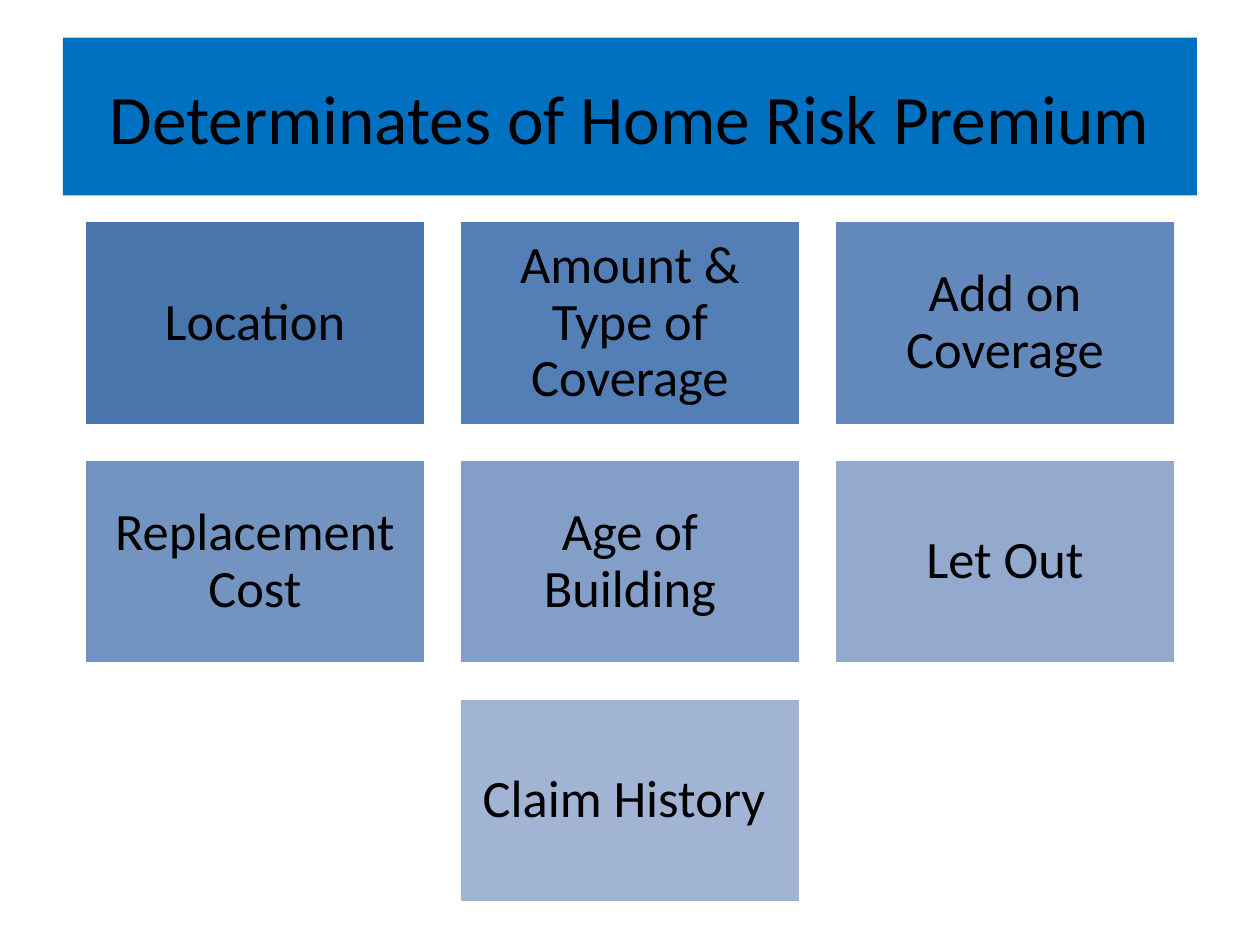
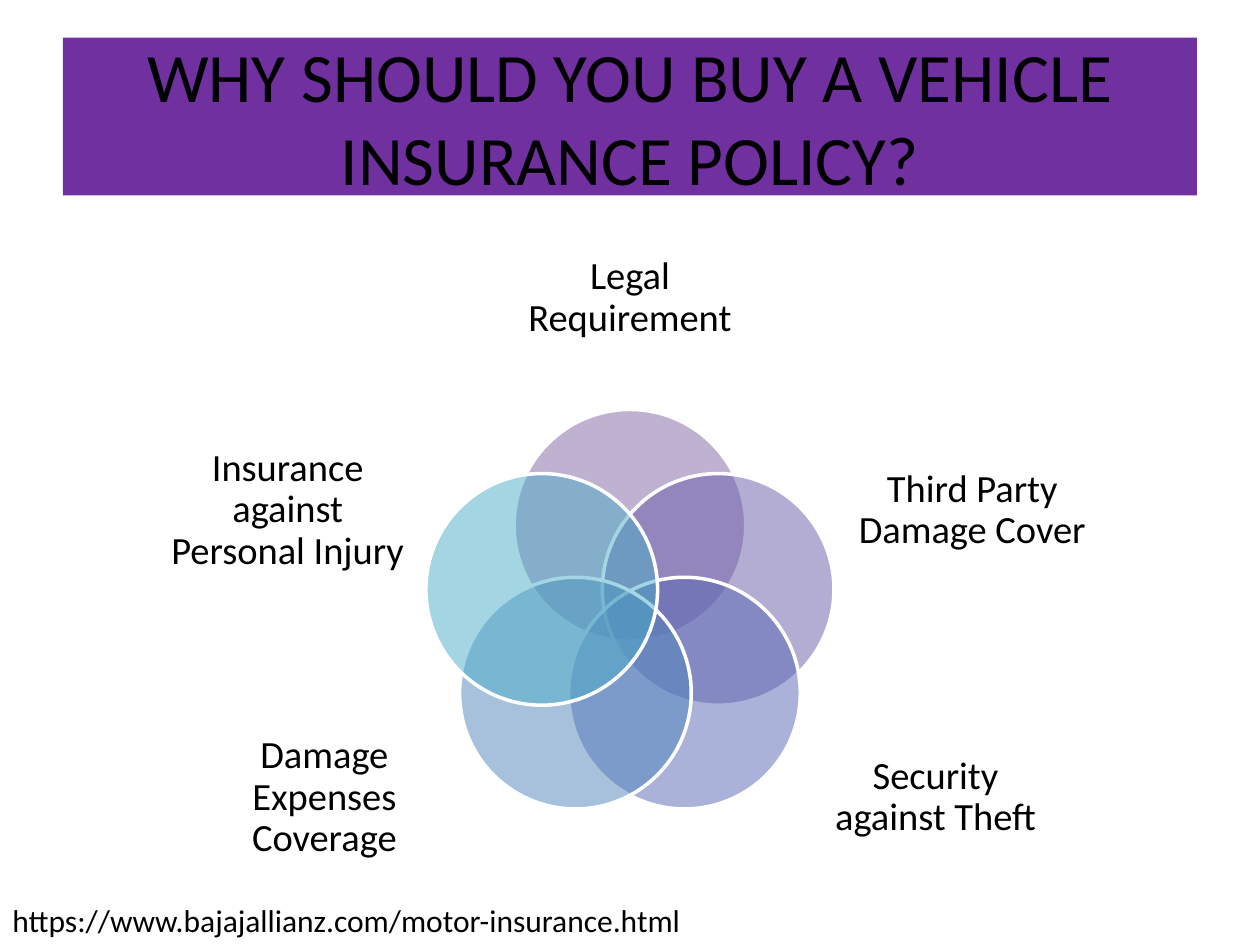
from math import cos, radians, sin

from lxml.etree import SubElement
from pptx import Presentation
from pptx.dml.color import RGBColor
from pptx.enum.shapes import MSO_SHAPE as Preset
from pptx.enum.text import MSO_ANCHOR as Anchor, PP_ALIGN as Align
from pptx.oxml.ns import qn
from pptx.util import Cm, Pt

# Shared look
FONT = "Calibri"
BLACK = RGBColor(0x00, 0x00, 0x00)
WHITE = RGBColor(0xFF, 0xFF, 0xFF)
BLUE = RGBColor(0x00, 0x70, 0xC0)
PURPLE = RGBColor(0x70, 0x30, 0xA0)
MIDDLE = 12.7  # vertical axis of the page, in cm

# Premium factors, three to a row
CARD_WIDTH, CARD_HEIGHT = 6.88, 4.13
COLUMN_STEP, ROW_STEP = 7.56, 4.81
CARDS_TOP, COLUMNS = 4.45, 3
FACTORS = [
    ("Location", RGBColor(0x48, 0x75, 0xAC)),
    ("Amount & Type of Coverage", RGBColor(0x53, 0x7F, 0xB6)),
    ("Add on Coverage", RGBColor(0x63, 0x89, 0xBC)),
    ("Replacement Cost", RGBColor(0x73, 0x93, 0xC1)),
    ("Age of Building", RGBColor(0x83, 0x9E, 0xC7)),
    ("Let Out", RGBColor(0x93, 0xA9, 0xCE)),
    ("Claim History ", RGBColor(0xA2, 0xB4, 0xD4)),
]

# Reasons, clockwise from the top: text, circle colour, label centre
RING_Y, RING_RADIUS, CIRCLE_SIZE = 12.46, 1.87, 4.67
LABEL_WIDTH, LABEL_HEIGHT = 4.85, 3.4
REASONS = [
    ("Legal Requirement", RGBColor(0x80, 0x64, 0xA2), (MIDDLE, 6.01)),
    ("Third Party Damage Cover", RGBColor(0x68, 0x5D, 0xAB), (MIDDLE + 6.9, 10.29)),
    ("Security against Theft", RGBColor(0x57, 0x67, 0xB4), (MIDDLE + 6.16, 16.08)),
    ("Damage Expenses Coverage", RGBColor(0x51, 0x85, 0xBD), (MIDDLE - 6.16, 16.08)),
    ("Insurance against Personal Injury", RGBColor(0x4B, 0xAC, 0xC6), (MIDDLE - 6.9, 10.29)),
]


def write(box, text, size, align=Align.CENTER, anchor=Anchor.MIDDLE, spacing=None, inset=None):
    """Put one formatted paragraph into a shape or text box."""
    frame = box.text_frame
    frame.word_wrap = True
    frame.vertical_anchor = anchor
    if inset is not None:
        frame.margin_left = frame.margin_right = Cm(inset)
        frame.margin_top = frame.margin_bottom = Cm(inset)
    para = frame.paragraphs[0]
    para.alignment = align
    para.line_spacing = spacing
    span = para.add_run()
    span.text = text
    span.font.name = FONT
    span.font.size = Pt(size)
    span.font.color.rgb = BLACK


def add_figure(page, preset, left, top, width, height, fill, line=None, opacity=None):
    figure = page.shapes.add_shape(preset, Cm(left), Cm(top), Cm(width), Cm(height))
    figure.shadow.inherit = False
    figure.fill.solid()
    figure.fill.fore_color.rgb = fill
    if line is None:
        figure.line.fill.background()
    else:
        figure.line.color.rgb = line
        figure.line.width = Pt(2)
    if opacity is not None:
        colour = figure.fill._xPr.find(qn("a:solidFill"))[0]
        SubElement(colour, qn("a:alpha")).set("val", str(opacity * 1000))
    return figure


def add_label(page, left, top, width, height, text, size, **style):
    box = page.shapes.add_textbox(Cm(left), Cm(top), Cm(width), Cm(height))
    write(box, text, size, **style)


def add_page(deck, title, colour):
    """Add a blank page with its title band."""
    page = deck.slides.add_slide(deck.slide_layouts[6])
    band = add_figure(page, Preset.RECTANGLE, 1.27, 0.76, 22.86, 3.18, colour)
    write(band, title, 39.6)
    return page


def add_cards(page):
    """Lay the factors out in rows, each row centred on the page."""
    for start in range(0, len(FACTORS), COLUMNS):
        row = FACTORS[start:start + COLUMNS]
        top = CARDS_TOP + start // COLUMNS * ROW_STEP
        first = MIDDLE - CARD_WIDTH / 2 - (len(row) - 1) / 2 * COLUMN_STEP
        for column, (text, colour) in enumerate(row):
            card = add_figure(page, Preset.RECTANGLE, first + column * COLUMN_STEP, top,
                              CARD_WIDTH, CARD_HEIGHT, colour, line=WHITE)
            write(card, text, 30, spacing=0.9, inset=0.3)


def add_ring(page):
    """Place overlapping circles evenly on a ring, each with its label."""
    for index, (text, colour, (label_x, label_y)) in enumerate(REASONS):
        angle = radians(index * 360 / len(REASONS))
        left = MIDDLE + RING_RADIUS * sin(angle) - CIRCLE_SIZE / 2
        top = RING_Y - RING_RADIUS * cos(angle) - CIRCLE_SIZE / 2
        add_figure(page, Preset.OVAL, left, top, CIRCLE_SIZE, CIRCLE_SIZE, colour,
                   line=WHITE, opacity=50)
        add_label(page, label_x - LABEL_WIDTH / 2, label_y - LABEL_HEIGHT / 2,
                  LABEL_WIDTH, LABEL_HEIGHT, text, 22, spacing=0.9, inset=0)


def main():
    deck = Presentation()
    deck.slide_width, deck.slide_height = Cm(25.4), Cm(19.05)

    # Home insurance
    page = add_page(deck, "Determinates of Home Risk Premium", BLUE)
    add_cards(page)

    # Vehicle insurance
    page = add_page(deck, "WHY SHOULD YOU BUY A VEHICLE INSURANCE POLICY?", PURPLE)
    add_ring(page)
    add_label(page, 0, 18.03, 18.42, 1.02, "https://www.bajajallianz.com/motor-insurance.html",
              18, align=Align.LEFT, anchor=Anchor.TOP)

    deck.save("out.pptx")


if __name__ == "__main__":
    main()
